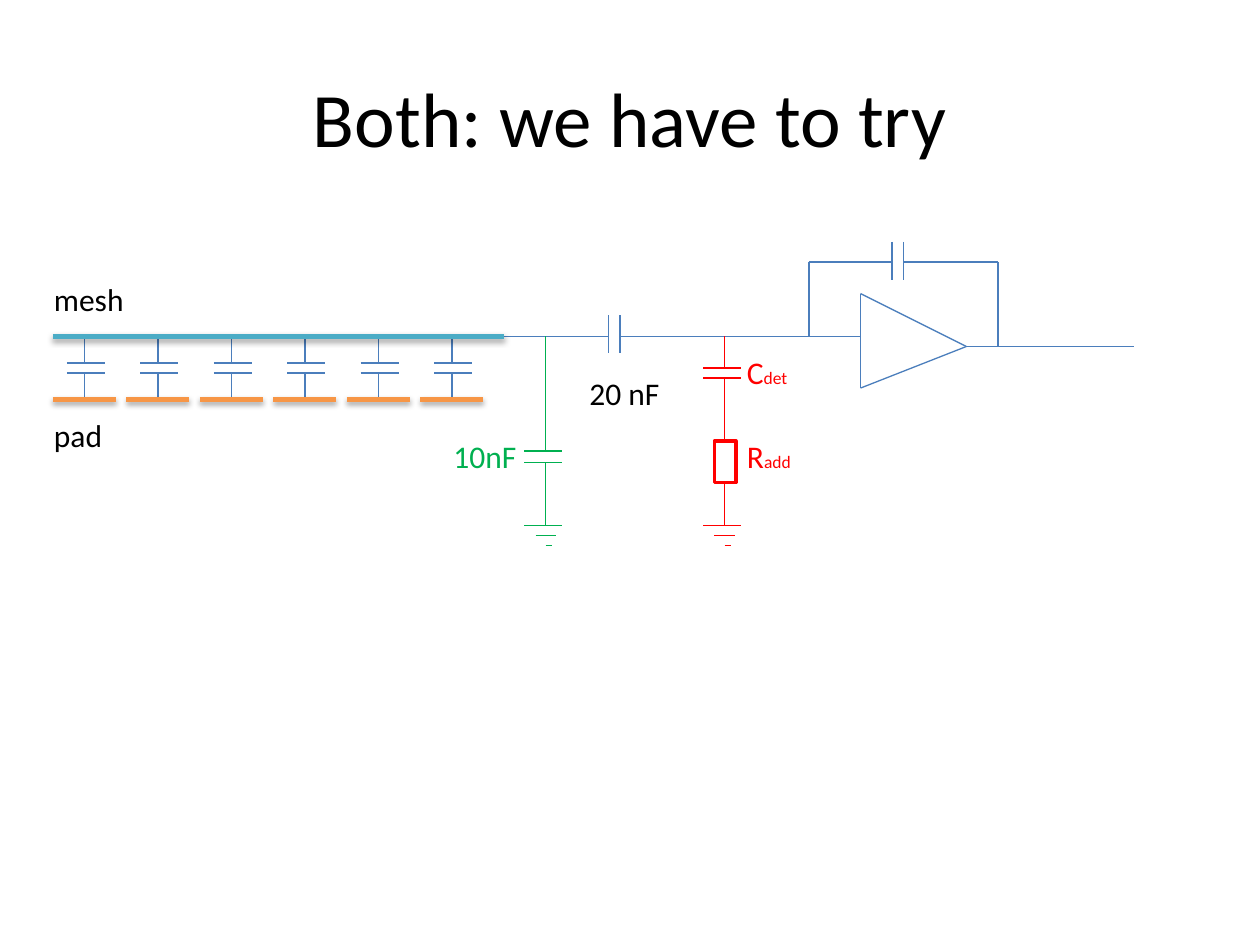
from lxml import etree
from pptx import Presentation
from pptx.dml.color import RGBColor
from pptx.enum.shapes import MSO_CONNECTOR, MSO_SHAPE
from pptx.enum.text import MSO_ANCHOR, MSO_AUTO_SIZE, PP_ALIGN
from pptx.oxml import parse_xml
from pptx.util import Inches, Pt

STRAIGHT = MSO_CONNECTOR.STRAIGHT
RECTANGLE = MSO_SHAPE.RECTANGLE
MIDDLE = MSO_ANCHOR.MIDDLE
FIT_SHAPE = MSO_AUTO_SIZE.SHAPE_TO_FIT_TEXT
CENTER, LEFT = PP_ALIGN.CENTER, PP_ALIGN.LEFT

COLORS = {
    "wire": "4B7EBC", "mesh": "4BACC6", "pad": "F79646", "added": "FF0000",
    "ground": "00B050", "text": "000000", "white": "FFFFFF",
}
DRAWING_NS = "http://schemas.openxmlformats.org/drawingml/2006/main"
BAR_SHADOW = (
    f'<a:effectLst xmlns:a="{DRAWING_NS}">'
    '<a:outerShdw blurRad="40000" dist="23000" dir="5400000" rotWithShape="0">'
    '<a:srgbClr val="000000"><a:alpha val="35000"/></a:srgbClr>'
    '</a:outerShdw></a:effectLst>'
)

prs = Presentation()
prs.slide_width, prs.slide_height = Inches(10), Inches(7.5)
slide = prs.slides.add_slide(prs.slide_layouts[6])


def add_line(x1, y1, x2, y2, color="wire", bar=False):
    """Draw a thin wire, or a thick shadowed electrode if bar is set."""
    line = slide.shapes.add_connector(
        STRAIGHT, Inches(x1), Inches(y1), Inches(x2), Inches(y2))
    line.line.color.rgb = RGBColor.from_string(COLORS[color])
    line.line.width = Pt(3 if bar else 0.75)
    properties = line._element.spPr
    if bar:
        properties.append(parse_xml(BAR_SHADOW))
    else:
        etree.SubElement(properties, f"{{{DRAWING_NS}}}effectLst")


def add_label(text, x, y, width, height=0.4, color="text", size=18,
              subscript="", align=LEFT, wrap=False):
    box = slide.shapes.add_textbox(
        Inches(x), Inches(y), Inches(width), Inches(height))
    frame = box.text_frame
    frame.word_wrap = wrap
    if wrap:
        frame.vertical_anchor = MIDDLE
    else:
        frame.auto_size = FIT_SHAPE
    paragraph = frame.paragraphs[0]
    paragraph.alignment = align
    paragraph.font.name = "Calibri"
    paragraph.font.size = Pt(size)
    paragraph.font.color.rgb = RGBColor.from_string(COLORS[color])
    paragraph.add_run().text = text
    if subscript:
        small = paragraph.add_run()
        small.text = subscript
        small.font.size = Pt(10)


add_label("Both: we have to try", 0.5, 0.3, 9, 1.25, size=44,
          align=CENTER, wrap=True)

# Mesh above a row of pads, with a capacitor to each pad
MESH_Y, PAD_Y = 2.67, 3.17
PAD_COUNT, PAD_PITCH, PAD_WIDTH = 6, 3.5 / 6, 0.5
MESH_LEFT = 0.42
for i in range(PAD_COUNT):
    left = MESH_LEFT + i * PAD_PITCH
    center = left + PAD_WIDTH / 2
    add_line(center, MESH_Y, center, 2.87)
    for plate_y in (2.88, 2.96):
        add_line(left + 0.11, plate_y, left + 0.41, plate_y)
    add_line(center, 2.96, center, 3.16)
    add_line(left, PAD_Y, left + PAD_WIDTH, PAD_Y, "pad", bar=True)

# Signal line through the coupling capacitor
add_line(4, MESH_Y, 4.83, MESH_Y)
add_line(4.92, MESH_Y, 6.83, MESH_Y)
add_line(MESH_LEFT, MESH_Y, 4, MESH_Y, "mesh", bar=True)

# Upright plates of the coupling and feedback capacitors
for plate_x, plate_top in ((4.83, 2.5), (7.08, 1.92)):
    for x in (plate_x, plate_x + 0.09):
        add_line(x, plate_top, x, plate_top + 0.3)

# Amplifier, its feedback loop and its output
amplifier_and_feedback = [
    (6.83, 2.33, 6.83, 3.08), (6.83, 2.33, 7.67, 2.75), (6.83, 3.08, 7.67, 2.75),
    (6.42, MESH_Y, 6.42, 2.08), (6.42, 2.08, 7.08, 2.08),
    (7.17, 2.08, 7.92, 2.08), (7.92, 2.08, 7.92, 2.75),
    (7.67, 2.75, 9, 2.75),
]
for ends in amplifier_and_feedback:
    add_line(*ends)

# Two branches to ground, each with a capacitor
GROUND_Y = 4.17
for x, upper_plate, lower_plate, color in (
        (4.33, 3.58, 3.67, "ground"), (5.75, 2.92, 3, "added")):
    add_line(x, MESH_Y, x, upper_plate, color)
    add_line(x, lower_plate, x, GROUND_Y, color)
    for y in (upper_plate, lower_plate, GROUND_Y):
        add_line(x - 0.17, y, x + 0.13, y, color)
    add_line(x - 0.08, 4.25, x + 0.08, 4.25, color)
    add_line(x, 4.33, x + 0.05, 4.33, color)

resistor = slide.shapes.add_shape(
    RECTANGLE, Inches(5.67), Inches(3.5), Inches(0.17), Inches(0.33))
resistor.shadow.inherit = False
resistor.fill.solid()
resistor.fill.fore_color.rgb = RGBColor.from_string(COLORS["white"])
resistor.line.color.rgb = RGBColor.from_string(COLORS["added"])
resistor.line.width = Pt(2)

add_label("mesh", 0.33, 2.17, 0.76)
add_label("pad", 0.33, 3.25, 0.59)
add_label("20 nF", 4.58, 2.92, 0.76)
add_label("10nF", 3.5, 3.42, 0.71, color="ground")
add_label("C", 5.83, 2.75, 0.53, color="added", subscript="det")
add_label("R", 5.83, 3.42, 0.55, color="added", subscript="add")

prs.save("out.pptx")
